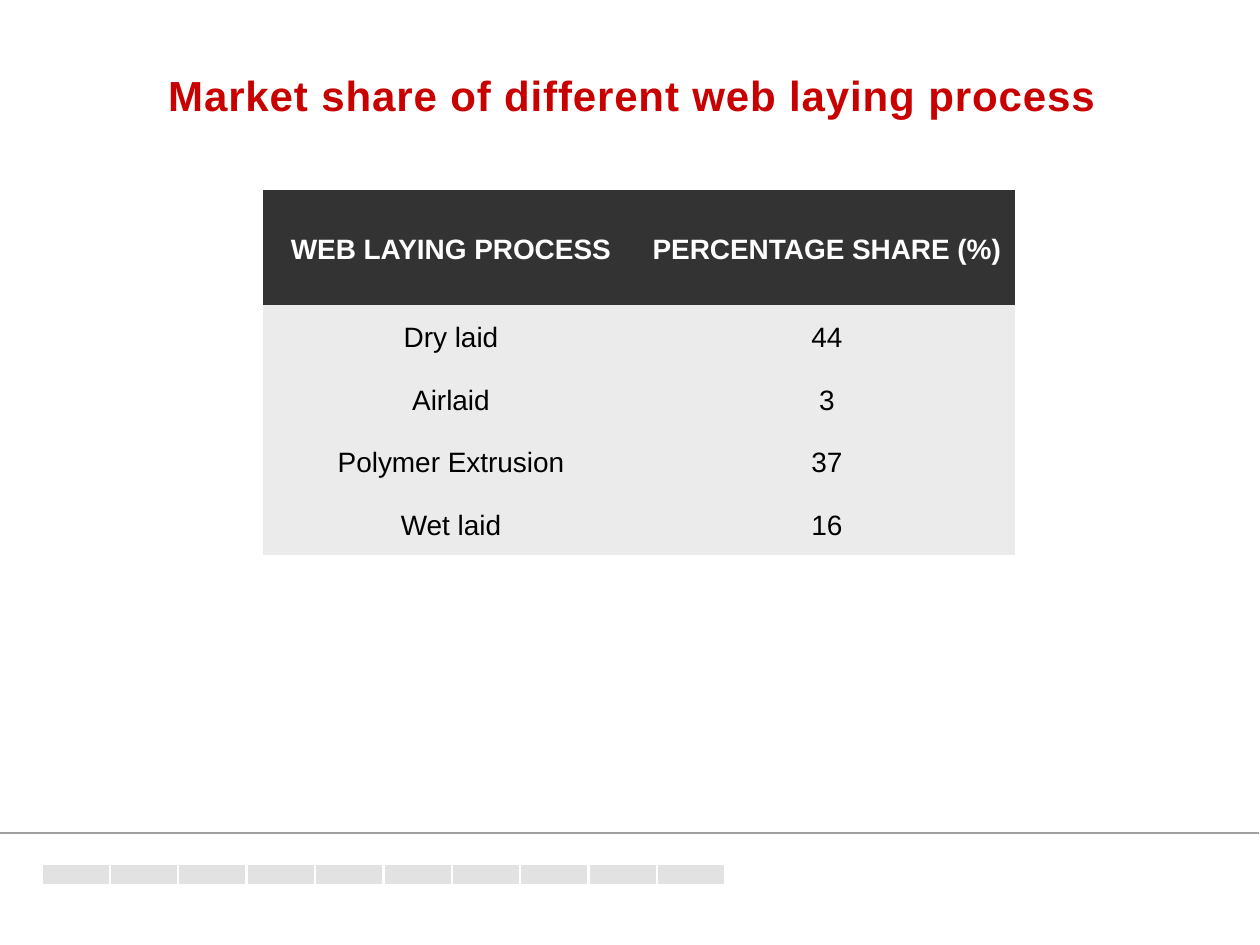
import dataclasses

import pptx
import pptx.dml.color
import pptx.enum.shapes
import pptx.enum.text
import pptx.oxml.ns
import pptx.oxml.xmlchemy
import pptx.util

PX = 914400 / 126
NO_STYLE = "{2D5ABB26-0587-4C30-8999-92F81FD0307C}"


@dataclasses.dataclass
class Theme:
    font: str = "Arial"
    title_size: float = 24
    table_size: float = 16
    hairline: float = 0.75
    red: str = "C90000"
    dark: str = "333333"
    pale: str = "EBEBEB"
    segment: str = "E2E2E2"
    rule: str = "9F9F9F"
    white: str = "FFFFFF"
    black: str = "000000"


def px(length):
    return pptx.util.Emu(round(length * PX))


def rgb(value):
    return pptx.dml.color.RGBColor.from_string(value)


def write(frame, text, *, font, size, color, bold=False, line_spacing=None, tracking=None):
    paragraph = frame.paragraphs[0]
    paragraph.alignment = pptx.enum.text.PP_ALIGN.CENTER
    if line_spacing:
        paragraph.line_spacing = line_spacing
    run = paragraph.add_run()
    run.text = text
    run.font.name = font
    run.font.size = pptx.util.Pt(size)
    run.font.bold = bold
    run.font.color.rgb = rgb(color)
    if tracking:
        run.font._element.set("spc", str(round(tracking * 100)))


class SlideBuilder:
    def __init__(self, slide, theme):
        self.slide = slide
        self.theme = theme

    def rectangle(self, left, top, width, height, fill, outline):
        shape = self.slide.shapes.add_shape(
            pptx.enum.shapes.MSO_SHAPE.RECTANGLE, px(left), px(top), px(width), px(height))
        shape.shadow.inherit = False
        shape.fill.solid()
        shape.fill.fore_color.rgb = rgb(fill)
        shape.line.color.rgb = rgb(outline)
        shape.line.width = pptx.util.Pt(self.theme.hairline)

    def rule(self, left, right, y):
        line = self.slide.shapes.add_connector(
            pptx.enum.shapes.MSO_CONNECTOR.STRAIGHT, px(left), px(y), px(right), px(y))
        line.line.color.rgb = rgb(self.theme.rule)
        line.line.width = pptx.util.Pt(self.theme.hairline)
        line._element.spPr.append(pptx.oxml.xmlchemy.OxmlElement("a:effectLst"))

    def title(self, text, left, top, width, height):
        frame = self.slide.shapes.add_textbox(
            px(left), px(top), px(width), px(height)).text_frame
        frame.word_wrap = True
        frame.auto_size = pptx.enum.text.MSO_AUTO_SIZE.SHAPE_TO_FIT_TEXT
        write(frame, text, font=self.theme.font, size=self.theme.title_size,
              color=self.theme.red, bold=True, tracking=0.5)

    def table(self, rows, left, top, column_width, row_heights):
        columns = len(rows[0])
        table = self.slide.shapes.add_table(
            len(rows), columns, px(left), px(top),
            px(column_width * columns), px(sum(row_heights))).table
        table.horz_banding = False
        style = table._tbl.tblPr.find(pptx.oxml.ns.qn("a:tableStyleId"))
        style.text = NO_STYLE
        for column in table.columns:
            column.width = px(column_width)
        for index, (values, height) in enumerate(zip(rows, row_heights)):
            table.rows[index].height = px(height)
            for cell, value in zip(table.rows[index].cells, values):
                self.cell(cell, value, header=index == 0)

    def cell(self, cell, value, header):
        theme = self.theme
        cell.fill.solid()
        cell.fill.fore_color.rgb = rgb(theme.dark if header else theme.pale)
        cell.vertical_anchor = pptx.enum.text.MSO_ANCHOR.MIDDLE
        cell.margin_left = cell.margin_right = px(2)
        cell.margin_top = cell.margin_bottom = px(2)
        write(cell.text_frame, value, font=theme.font, size=theme.table_size,
              color=theme.white if header else theme.black, bold=header,
              line_spacing=1.15)


def main():
    deck = pptx.Presentation()
    deck.slide_width = px(1260)
    deck.slide_height = px(945)
    theme = Theme()
    page = SlideBuilder(deck.slides.add_slide(deck.slide_layouts[6]), theme)

    for index in range(10):
        page.rectangle(42 + 684 * index // 10, 864, 68, 21, theme.segment, theme.white)
    page.rule(0, 1259, 833)

    market_shares = [
        ("WEB LAYING PROCESS", "PERCENTAGE SHARE (%)"),
        ("Dry laid", "44"),
        ("Airlaid", "3"),
        ("Polymer Extrusion", "37"),
        ("Wet laid", "16"),
    ]
    page.table(market_shares, 263, 190, 376, [115] + [62, 63] * 2)
    page.title("Market share of different web laying process", 69, 63, 1126, 63)

    deck.save("out.pptx")


if __name__ == "__main__":
    main()
